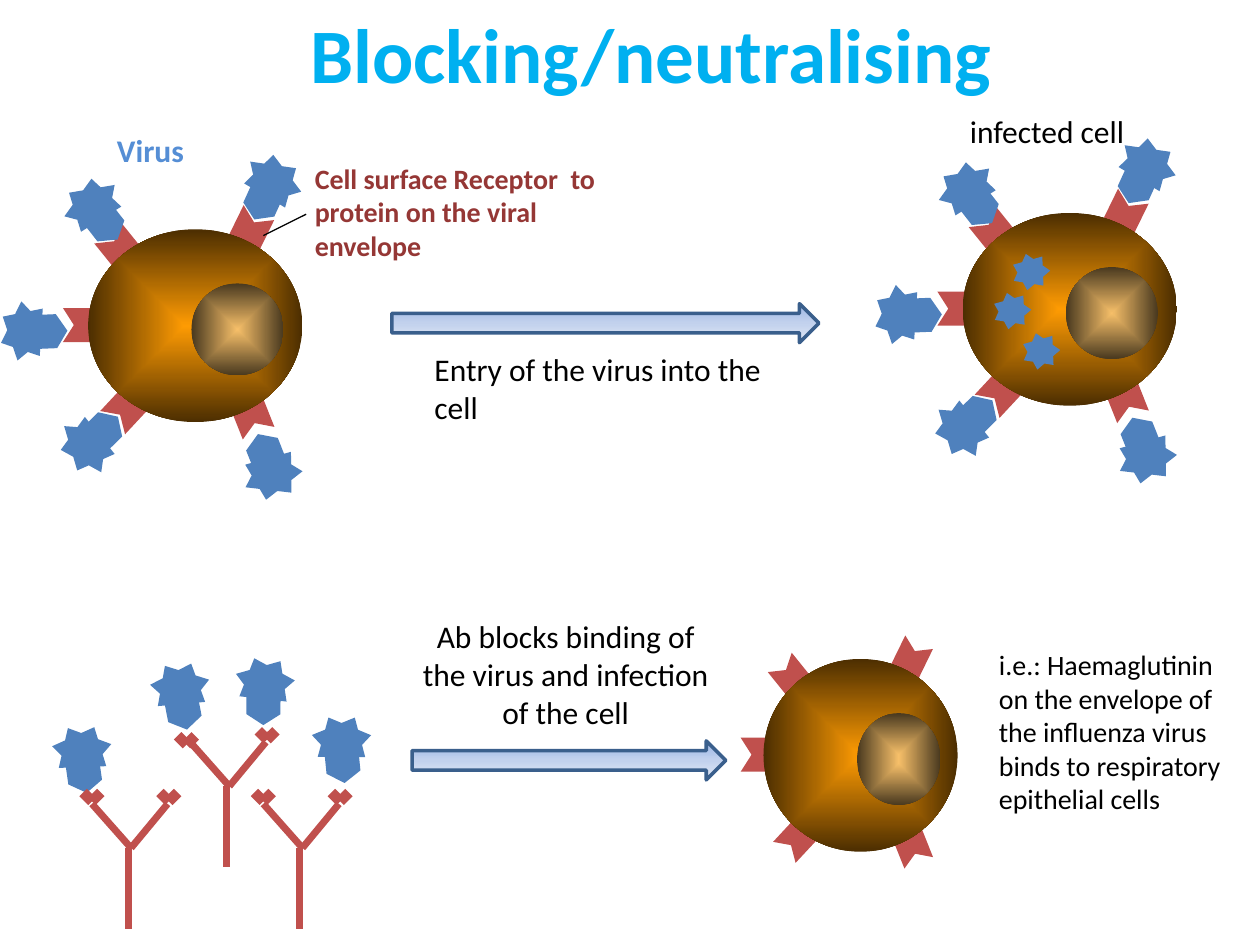
import math

from lxml import etree
from pptx import Presentation
from pptx import util as u
from pptx.dml.color import RGBColor
from pptx.enum import shapes, text
from pptx.oxml import ns

PX = 9144  # 100 px to the inch

TITLE_BLUE = RGBColor(0x00, 0xB0, 0xF0)
VIRUS_BLUE = RGBColor(0x4F, 0x81, 0xBD)
LABEL_BLUE = RGBColor(0x55, 0x8E, 0xD5)
RECEPTOR_RED = RGBColor(0xC0, 0x50, 0x4D)
LABEL_RED = RGBColor(0x95, 0x37, 0x35)
ARROW_EDGE = RGBColor(0x3A, 0x5F, 0x8C)
BLACK = RGBColor(0, 0, 0)
CELL_STOPS = [(0, RGBColor(0xFE, 0x9B, 0x03)), (100, RGBColor(0x4C, 0x2E, 0x01))]
NUCLEUS_STOPS = [(0, RGBColor(0xF6, 0xBF, 0x69)), (100, RGBColor(0x49, 0x39, 0x1F))]
ARROW_STOPS = [(0, RGBColor(0x9A, 0xB5, 0xE4)), (50, RGBColor(0xC2, 0xD1, 0xED)),
               (100, RGBColor(0xE1, 0xE8, 0xF5))]

CELL_W, CELL_H = 170, 153
# Centres relative to the cell's top left corner, and rotation
RECEPTORS = [(-3, 76, 0), (31, 141, 313), (129, 146, 248.3), (26, 16, 51.1), (128, 2, 116.1)]
BOUND_VIRUSES = [(146, 193, 248.3), (146, -37, 114.5), (4, -18, 52), (0, 171, 315.2),
                 (-49, 81, 357.7)]
ENTERED_VIRUSES = [(39, 32), (24, 63), (47, 95)]


def px(*lengths):
    return [round(length * PX) for length in lengths]


def add_shape(slide, kind, box, color=None, rotation=0):
    shape = slide.shapes.add_shape(kind, *px(*box))
    shape.shadow.inherit = False
    shape.line.fill.background()
    shape.rotation = rotation
    if color is not None:
        shape.fill.solid()
        shape.fill.fore_color.rgb = color
    return shape


def set_gradient(shape, stops, angle=None):
    """Linear gradient at the angle, or one from the centre outwards without it."""
    shape.fill.gradient()
    gradient = shape._element.spPr.find(ns.qn("a:gradFill"))
    for child in list(gradient):
        gradient.remove(child)
    stop_list = etree.SubElement(gradient, ns.qn("a:gsLst"))
    for position, color in stops:
        stop = etree.SubElement(stop_list, ns.qn("a:gs"), pos=str(position * 1000))
        etree.SubElement(stop, ns.qn("a:srgbClr"), val=str(color))
    if angle is None:
        centre = etree.SubElement(gradient, ns.qn("a:path"), {"path": "shape"})
        etree.SubElement(centre, ns.qn("a:fillToRect"), l="50000", t="50000", r="50000", b="50000")
    else:
        etree.SubElement(gradient, ns.qn("a:lin"), ang=str(angle * 60000), scaled="0")


def add_line(slide, start, end, color, width):
    line = slide.shapes.add_connector(shapes.MSO_CONNECTOR.STRAIGHT, *px(*start, *end))
    line.line.color.rgb = color
    line.line.width = u.Pt(width)
    etree.SubElement(line._element.spPr, ns.qn("a:effectLst"))


def add_label(slide, box, words, size, color=BLACK, bold=False, centred=False, wrap=True):
    label = slide.shapes.add_textbox(*px(*box))
    frame = label.text_frame
    frame.text = words
    frame.word_wrap = wrap
    frame.auto_size = text.MSO_AUTO_SIZE.SHAPE_TO_FIT_TEXT
    paragraph = frame.paragraphs[0]
    if centred:
        paragraph.alignment = text.PP_ALIGN.CENTER
    font = paragraph.runs[0].font
    font.name, font.size, font.bold = "Calibri", u.Pt(size), bold
    font.color.rgb = color
    return label


def add_arrow(slide, box):
    arrow = add_shape(slide, shapes.MSO_SHAPE.RIGHT_ARROW, box)
    set_gradient(arrow, ARROW_STOPS, 90)
    arrow.line.color.rgb = ARROW_EDGE
    arrow.line.width = u.Pt(2)


def add_virus(slide, x, y, angle):
    """Star centred on x, y with a binding spike that points along the angle."""
    add_shape(slide, shapes.MSO_SHAPE.STAR_7_POINT, (x - 23.5, y - 19.5, 47, 39),
              VIRUS_BLUE, (angle + 96) % 360)
    reach = math.radians(angle + 3)
    spike = add_shape(slide, shapes.MSO_SHAPE.PENTAGON,
                      (x + 15.5 * math.cos(reach) - 17, y + 15.5 * math.sin(reach) - 13.5, 34, 27),
                      VIRUS_BLUE, angle)
    spike.adjustments[0] = 0.32


def add_cell(slide, left, top, width=CELL_W):
    """Cell with receptors; a narrower one is squeezed sideways."""
    squeeze = width / CELL_W
    for x, y, angle in RECEPTORS:
        w, h = (34, 27 * squeeze) if angle else (34 * squeeze, 27)
        receptor = add_shape(slide, shapes.MSO_SHAPE.CHEVRON,
                             (left + x * squeeze - w / 2, top + y - h / 2, w, h),
                             RECEPTOR_RED, angle)
        receptor.adjustments[0] = 0.32
    body = add_shape(slide, shapes.MSO_SHAPE.OVAL, (left, top, width, CELL_H))
    set_gradient(body, CELL_STOPS)
    nucleus = add_shape(slide, shapes.MSO_SHAPE.OVAL,
                        (left + 82 * squeeze, top + 43, 73 * squeeze, 73))
    set_gradient(nucleus, NUCLEUS_STOPS)


def add_antibody(slide, left, top, left_tip=(7, 7)):
    def stroke(start, end, width):
        add_line(slide, (left + start[0], top + start[1]), (left + end[0], top + end[1]),
                 RECEPTOR_RED, width)

    stroke((36, 108), (36, 44), 4)
    for arm_x in (67, 7):
        stroke((arm_x, 9), (38, 44), 4)
    for x, y in (left_tip, (68, 7)):
        for side in (7, -7):
            stroke((x + side, y - 7), (x, y), 6)


def add_attacked_cell(slide, left, top):
    add_cell(slide, left, top)
    for x, y, angle in BOUND_VIRUSES:
        add_virus(slide, left + x, top + y, angle)


def add_binding(slide, left, top):
    add_attacked_cell(slide, left + 70, top + 83)
    add_label(slide, (left + 83, top, 74, 40), "Virus", 18, LABEL_BLUE, bold=True, wrap=False)
    add_label(slide, (left + 240, top + 24, 244, 91),
              "Cell surface Receptor  to protein on the viral envelope", 16, LABEL_RED, bold=True)
    add_line(slide, (left + 209, top + 88), (left + 243, top + 71), BLACK, 0.75)


def add_infection(slide, left, top):
    add_arrow(slide, (left, top + 157, 339, 31))
    add_label(slide, (left + 24, top + 189, 307, 71), "Entry of the virus into the cell", 18)
    cell_left, cell_top = left + 453, top + 85
    add_attacked_cell(slide, cell_left, cell_top)
    for x, y in ENTERED_VIRUSES:
        add_shape(slide, shapes.MSO_SHAPE.STAR_7_POINT, (cell_left + x, cell_top + y, 30, 28),
                  VIRUS_BLUE, 344.3)
    add_label(slide, (left + 386, top, 268, 40), "infected cell", 18, centred=True)


def add_neutralised_viruses(slide, left, top):
    for x, y, angle in [(23, 73, 81.9), (101, 23, 79), (168, 19, 90.4), (229, 65, 84.2)]:
        add_virus(slide, left + x, top + y, angle)
    add_antibody(slide, left + 24, top + 105)
    add_antibody(slide, left + 102, top + 56, left_tip=(4, 11))
    add_antibody(slide, left + 160, top + 105)


def add_protected_cell(slide, left, top):
    add_label(slide, (left, top, 260, 101),
              "Ab blocks binding of the virus and infection of the cell", 18, centred=True)
    add_arrow(slide, (left + 8, top + 103, 249, 31))
    add_cell(slide, left + 287, top + 38, width=154)
    add_label(slide, (left + 464, top + 24, 197, 145),
              "i.e.: Haemaglutinin on the envelope of the influenza virus binds to "
              "respiratory epithelial cells", 16)


def main():
    deck = Presentation()
    deck.slide_width, deck.slide_height = px(1000, 750)
    slide = deck.slides.add_slide(deck.slide_layouts[6])
    title = add_label(slide, (67, 0, 900, 125), "Blocking/neutralising", 44, TITLE_BLUE,
                      bold=True, centred=True)
    title.text_frame.auto_size = text.MSO_AUTO_SIZE.NONE
    add_neutralised_viruses(slide, 42, 524)
    add_binding(slide, 0, 99)
    add_infection(slide, 311, 84)
    add_protected_cell(slide, 319, 485)
    deck.save("out.pptx")


if __name__ == "__main__":
    main()
